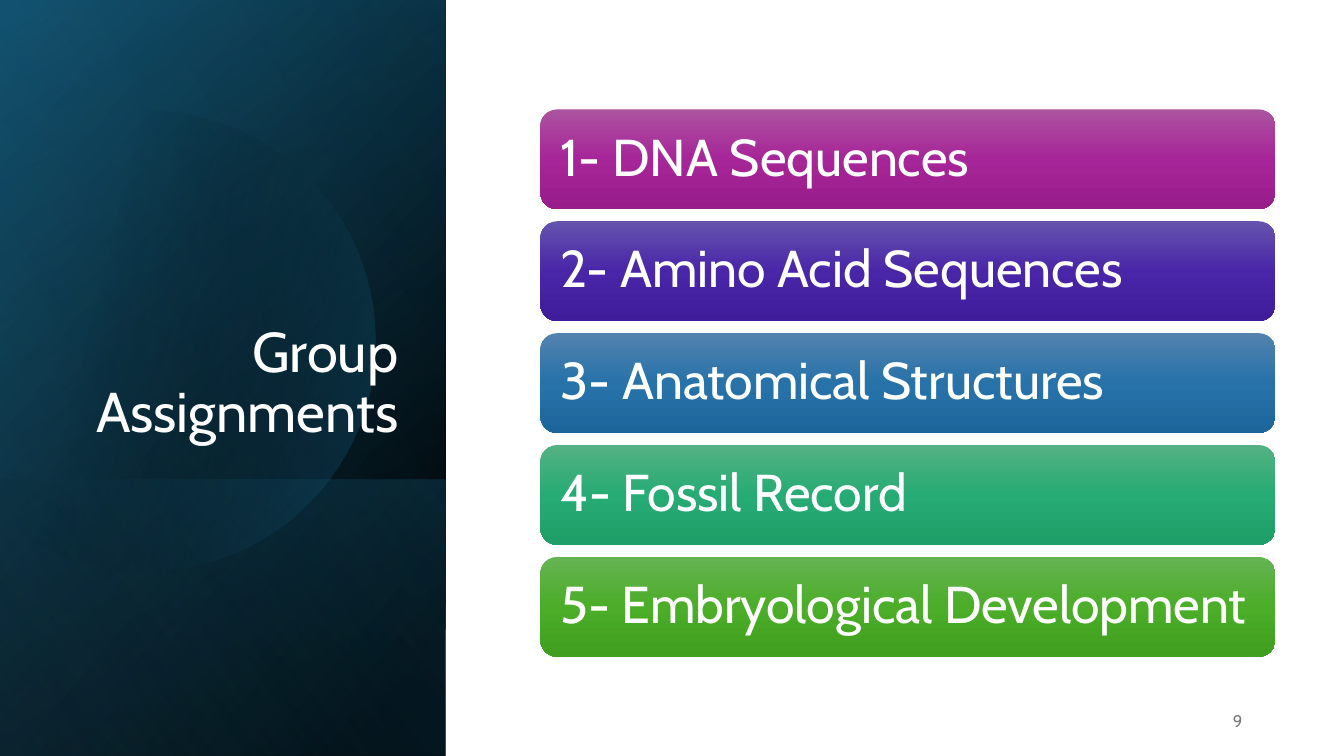
from pptx import Presentation
from pptx.dml.color import RGBColor
from pptx.enum.shapes import MSO_SHAPE as Kind
from pptx.enum.text import MSO_ANCHOR as Anchor, PP_ALIGN as Align
from pptx.oxml import parse_xml
from pptx.oxml.ns import nsdecls, qn
from pptx.util import Inches, Pt

WIDE, HIGH = 13.33, 7.5
SIDE = 4.42
FONT = "Cabin"
TITLE, NUMBER = "Group Assignments", "9"

# label and its top, middle and bottom colours
ROWS = [
    ("1- DNA Sequences", ("AC53A0", "A62598", "991C8B")),
    ("2- Amino Acid Sequences", ("6553AE", "4926A8", "3E1C9A")),
    ("3- Anatomical Structures", ("5382AF", "2772A9", "1D669C")),
    ("4- Fossil Record", ("54B183", "27AB74", "1E9E68")),
    ("5- Embryological Development", ("66B354", "4BAD28", "409F1E")),
]
LEFT, TOP, WIDTH, HEIGHT, PITCH = 5.36, 1.085, 7.29, 0.99, 1.11

# top and height of each layer, gradient angle, stops as (place, colour, opacity)
LOW = 2.74
BASE = [
    (0, HIGH, 50, [(8, "000000", 100), (100, "104862", 100)]),
    (0, HIGH, 30, [(0, "000000", 0), (99, "156082", 46)]),
    (HIGH - LOW, LOW, 130, [(2, "156082", 29), (100, "000000", 30)]),
]
GLOW = (0, HIGH, 120, [(0, "000000", 0), (99, "46B1E1", 11)])

DISC_FILL = (14, [(29, "000000", 0), (100, "156082", 43)])
DISC = [  # start, then curves of three points and lines of one
    [(1.49, 1.1)],
    [(2.46, 1.12), (3.35, 1.77), (3.63, 2.75)],
    [(3.98, 3.97), (3.28, 5.23), (2.07, 5.58)],
    [(1.31, 5.8), (0.53, 5.61), (0, 5.14)],
    [(0, 1.61)],
    [(0.23, 1.42), (0.5, 1.28), (0.8, 1.19)],
    [(1.03, 1.13), (1.26, 1.1), (1.49, 1.1)],
]
STEPS = 24


def blend(shape, angle, stops):
    """Fill the shape with a linear gradient and drop its line and shadow."""
    shape.shadow.inherit = False
    shape.line.fill.background()
    shape.fill.solid()
    marks = "".join(
        f'<a:gs pos="{place * 1000}"><a:srgbClr val="{color}">'
        f'<a:alpha val="{alpha * 1000}"/></a:srgbClr></a:gs>'
        for place, color, alpha in stops)
    grad = parse_xml(
        f'<a:gradFill {nsdecls("a")} rotWithShape="1"><a:gsLst>{marks}</a:gsLst>'
        f'<a:lin ang="{angle * 60000}" scaled="0"/></a:gradFill>')
    props = shape._element.spPr
    props.replace(props.find(qn("a:solidFill")), grad)


def layer(shapes, top, high, angle, stops):
    """Add a mirrored, quarter-turned rectangle that covers the side panel."""
    left, mid = (SIDE - high) / 2, top + high / 2
    shape = shapes.add_shape(Kind.RECTANGLE, Inches(left), Inches(mid - SIDE / 2),
                             Inches(high), Inches(SIDE))
    shape.rotation = 90
    shape._element.spPr.xfrm.set("flipH", "1")
    blend(shape, angle, stops)


def curve(start, one, two, end):
    """Return points along a cubic curve."""
    points = []
    for step in range(1, STEPS + 1):
        t = step / STEPS
        u = 1 - t
        points.append(tuple(
            u**3 * a + 3 * u * u * t * b + 3 * u * t * t * c + t**3 * d
            for a, b, c, d in zip(start, one, two, end)))
    return points


def disc(shapes):
    points = list(DISC[0])
    for part in DISC[1:]:
        points += curve(points[-1], *part) if len(part) == 3 else part
    dots = [(Inches(x), Inches(y)) for x, y in points]
    form = shapes.build_freeform(*dots[0], scale=1.0)
    form.add_line_segments(dots[1:], close=True)
    blend(form.convert_to_shape(), *DISC_FILL)


def write(shape, text, size, color, align, anchor, space=0.9):
    frame = shape.text_frame
    frame.text = text
    frame.word_wrap = True
    frame.vertical_anchor = anchor
    para = frame.paragraphs[0]
    para.alignment = align
    para.line_spacing = space
    font = para.runs[0].font
    font.name, font.size = FONT, Pt(size)
    font.color.rgb = RGBColor.from_string(color)


def label(shapes, box, *style):
    write(shapes.add_textbox(*map(Inches, box)), *style)


def main():
    deck = Presentation()
    deck.slide_width, deck.slide_height = Inches(WIDE), Inches(HIGH)
    shapes = deck.slides.add_slide(deck.slide_layouts[6]).shapes

    for item in BASE:
        layer(shapes, *item)
    disc(shapes)
    layer(shapes, *GLOW)
    label(shapes, (0.64, 1.84, 3.41, 2.62), TITLE, 40, "FFFFFF",
          Align.RIGHT, Anchor.BOTTOM)

    for index, (text, colors) in enumerate(ROWS):
        box = LEFT, TOP + index * PITCH, WIDTH, HEIGHT
        bar = shapes.add_shape(Kind.ROUNDED_RECTANGLE, *map(Inches, box))
        blend(bar, 90, [(50 * i, color, 100) for i, color in enumerate(colors)])
        write(bar, text, 37, "FFFFFF", Align.LEFT, Anchor.MIDDLE)
        bar.text_frame.margin_left = Inches(0.15)
        bar.text_frame.margin_right = Inches(0.15)

    label(shapes, (9.42, 6.95, 3, 0.4), NUMBER, 12, "797979",
          Align.RIGHT, Anchor.MIDDLE, 1.0)
    deck.save("out.pptx")


if __name__ == "__main__":
    main()
